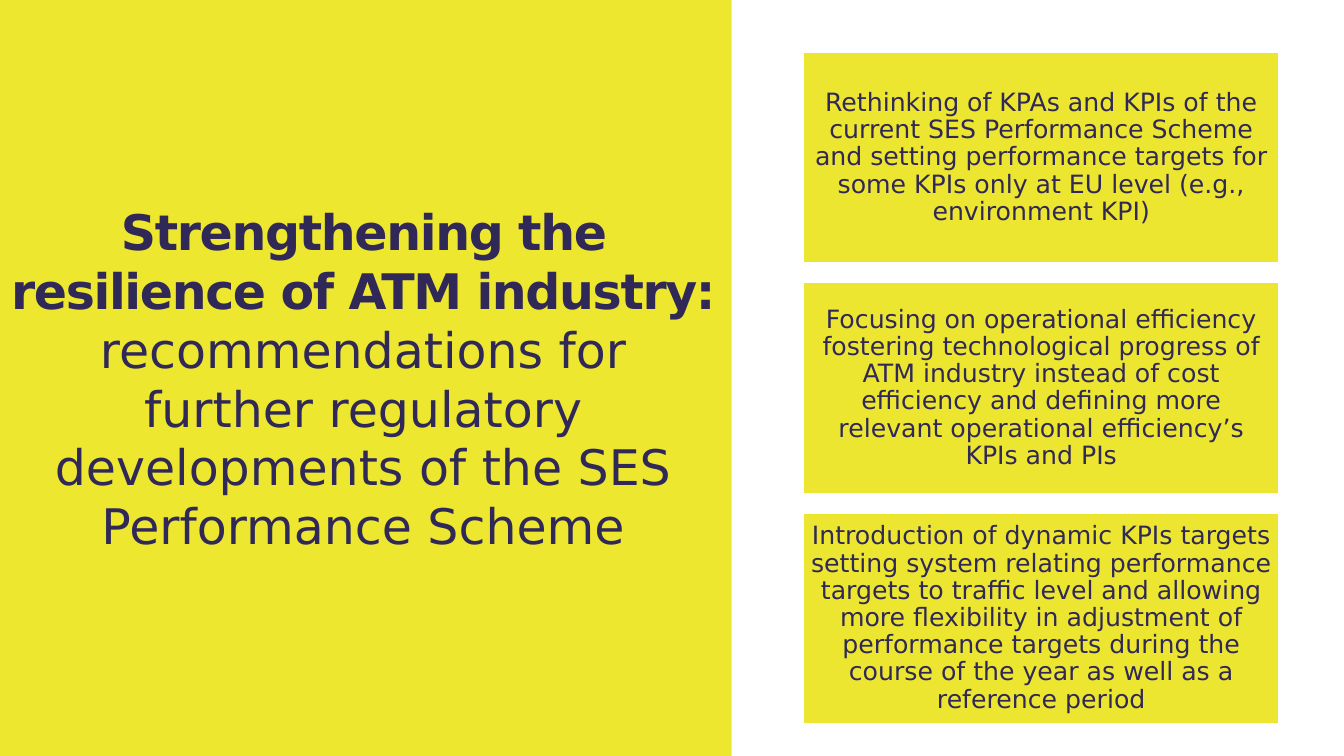
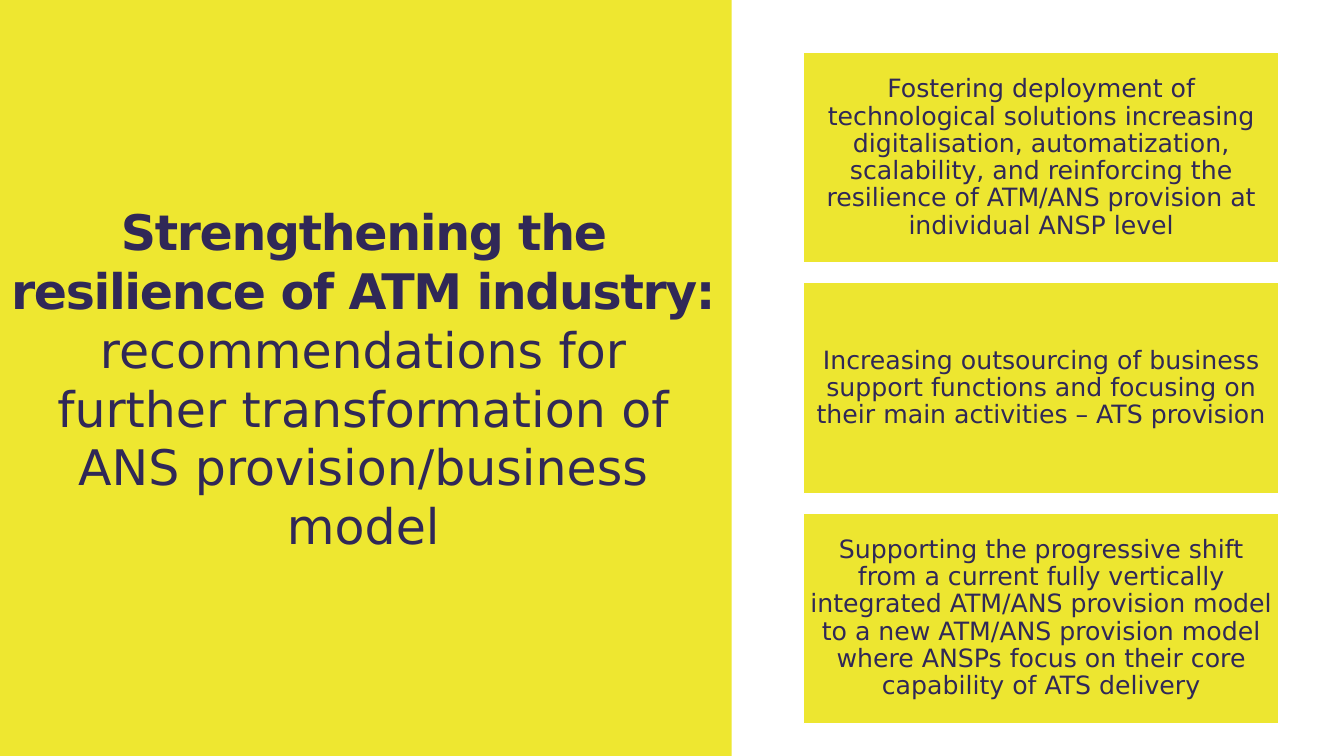
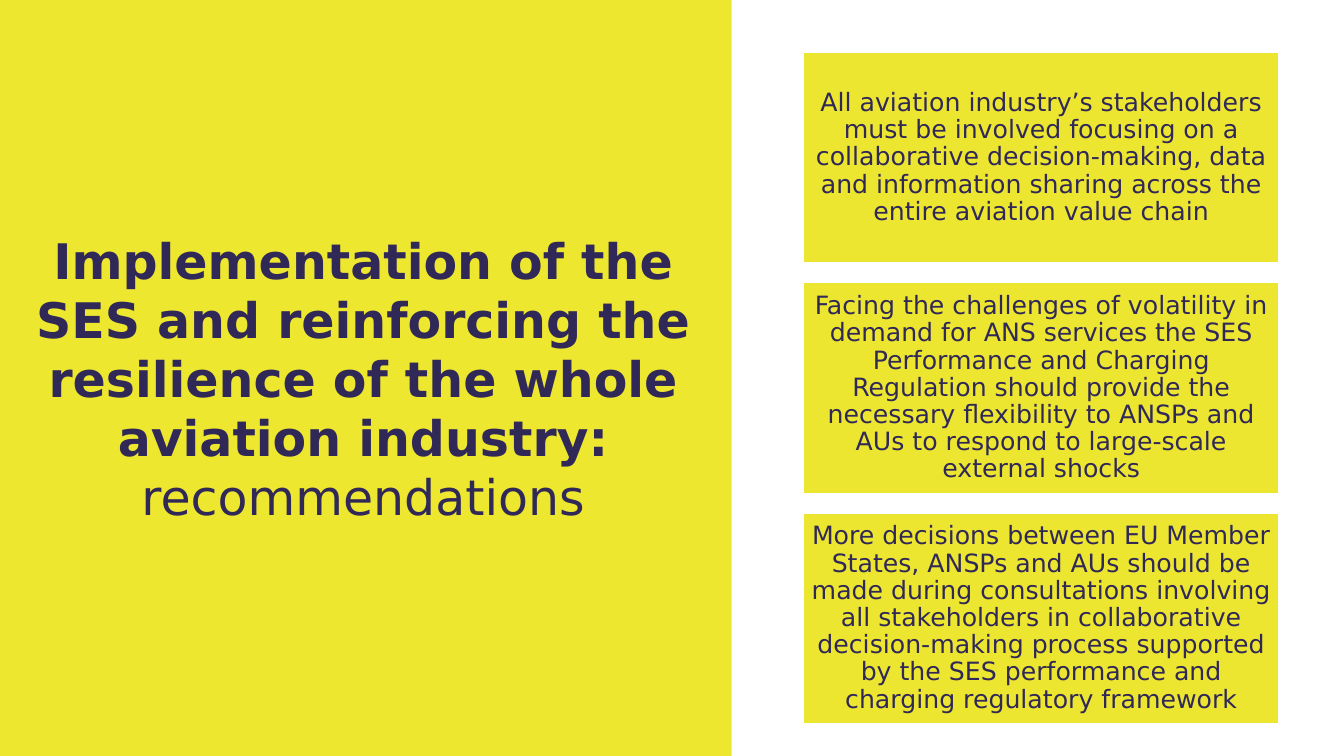
"""Build three recommendation slides with a title panel and three cards each."""
import pptx
import pptx.dml.color
import pptx.enum.shapes
import pptx.enum.text
import pptx.util

Pt = pptx.util.Pt
RECTANGLE = pptx.enum.shapes.MSO_SHAPE.RECTANGLE
MIDDLE = pptx.enum.text.MSO_ANCHOR.MIDDLE
CENTER = pptx.enum.text.PP_ALIGN.CENTER

FONT = "DejaVu Sans"
INK = "302857"
PANEL_YELLOW = "EEE730"
CARD_YELLOW = "EDE630"
WHITE = "FFFFFF"
CARD_LEFT, CARD_TOP, CARD_WIDTH, CARD_HEIGHT = 573.84, 37.44, 339.84, 150.48
CARD_PITCH = 164.5
CARD_INSET = 5


def color(value):
    return pptx.dml.color.RGBColor.from_string(value)


def add_run(paragraph, text, size, bold=False):
    run = paragraph.add_run()
    run.text = text
    run.font.name = FONT
    run.font.size = Pt(size)
    run.font.bold = bold
    run.font.color.rgb = color(INK)
    return run


RESILIENCE = "Strengthening the resilience of ATM industry:"
topics = [
    (RESILIENCE, -100,
     "recommendations for further regulatory developments of the SES Performance Scheme",
     ["Rethinking of KPAs and KPIs of the current SES Performance Scheme and setting "
      "performance targets for some KPIs only at EU level (e.g., environment KPI)",
      "Focusing on operational efficiency fostering technological progress of ATM industry "
      "instead of cost efficiency and defining more relevant operational efficiency’s KPIs and PIs",
      "Introduction of dynamic KPIs targets setting system relating performance targets to "
      "traffic level and allowing more flexibility in adjustment of performance targets during "
      "the course of the year as well as a reference period"]),
    (RESILIENCE, -100,
     "recommendations for further transformation of ANS provision/business model",
     ["Fostering deployment of technological solutions increasing digitalisation, "
      "automatization, scalability, and reinforcing the resilience of ATM/ANS provision at "
      "individual ANSP level",
      "Increasing outsourcing of business support functions and focusing on their main "
      "activities – ATS provision",
      "Supporting the progressive shift from a current fully vertically integrated ATM/ANS "
      "provision model to a new ATM/ANS provision model where ANSPs focus on their core "
      "capability of ATS delivery"]),
    ("Implementation of the SES and reinforcing the resilience of the whole aviation industry:", 0,
     "recommendations",
     ["All aviation industry’s stakeholders must be involved focusing on a collaborative "
      "decision-making, data and information sharing across the entire aviation value chain",
      "Facing the challenges of volatility in demand for ANS services the SES Performance and "
      "Charging Regulation should provide the necessary flexibility to ANSPs and AUs to respond "
      "to large-scale external shocks",
      "More decisions between EU Member States, ANSPs and AUs should be made during "
      "consultations involving all stakeholders in collaborative decision-making process "
      "supported by the SES performance and charging regulatory framework"]),
]

deck = pptx.Presentation()
deck.slide_width = Pt(960)
deck.slide_height = Pt(540)
layout = deck.slide_layouts[5]
slides = [deck.slides.add_slide(layout) for topic in topics]

panel = slides[0].shapes.add_shape(RECTANGLE, Pt(-0.72), Pt(0), Pt(523.44), Pt(540))
panel.shadow.inherit = False
panel.fill.solid()
panel.fill.fore_color.rgb = color(PANEL_YELLOW)
panel.line.fill.background()
panel.element.xpath("./p:nvSpPr/p:cNvPr")[0].set("id", "20")
layout.shapes.element.insert(2, panel.element)

for slide, (theme, spacing, subject, recommendations) in zip(slides, topics):
    title = slide.shapes.title
    title.left, title.top, title.width, title.height = Pt(0), Pt(138.96), Pt(519.12), Pt(262.08)
    title.text_frame.word_wrap = True
    title.text_frame.auto_size = pptx.enum.text.MSO_AUTO_SIZE.NONE
    title.text_frame.vertical_anchor = MIDDLE
    heading = title.text_frame.paragraphs[0]
    heading.alignment = CENTER
    theme_run = add_run(heading, theme, 35, bold=True)
    if spacing:
        theme_run.font._element.set("spc", str(spacing))
    heading.add_line_break()
    add_run(heading, subject, 35)

    for row, recommendation in enumerate(recommendations):
        card = slide.shapes.add_shape(RECTANGLE, Pt(CARD_LEFT), Pt(CARD_TOP + row * CARD_PITCH),
                                      Pt(CARD_WIDTH), Pt(CARD_HEIGHT))
        card.shadow.inherit = False
        card.fill.solid()
        card.fill.fore_color.rgb = color(CARD_YELLOW)
        card.line.color.rgb = color(WHITE)
        card.line.width = Pt(1)
        frame = card.text_frame
        frame.word_wrap = True
        frame.vertical_anchor = MIDDLE
        frame.margin_left = frame.margin_right = Pt(CARD_INSET)
        frame.margin_top = frame.margin_bottom = Pt(CARD_INSET)
        advice = frame.paragraphs[0]
        advice.alignment = CENTER
        advice.line_spacing = 0.9
        add_run(advice, recommendation, 18)

deck.save("out.pptx")
